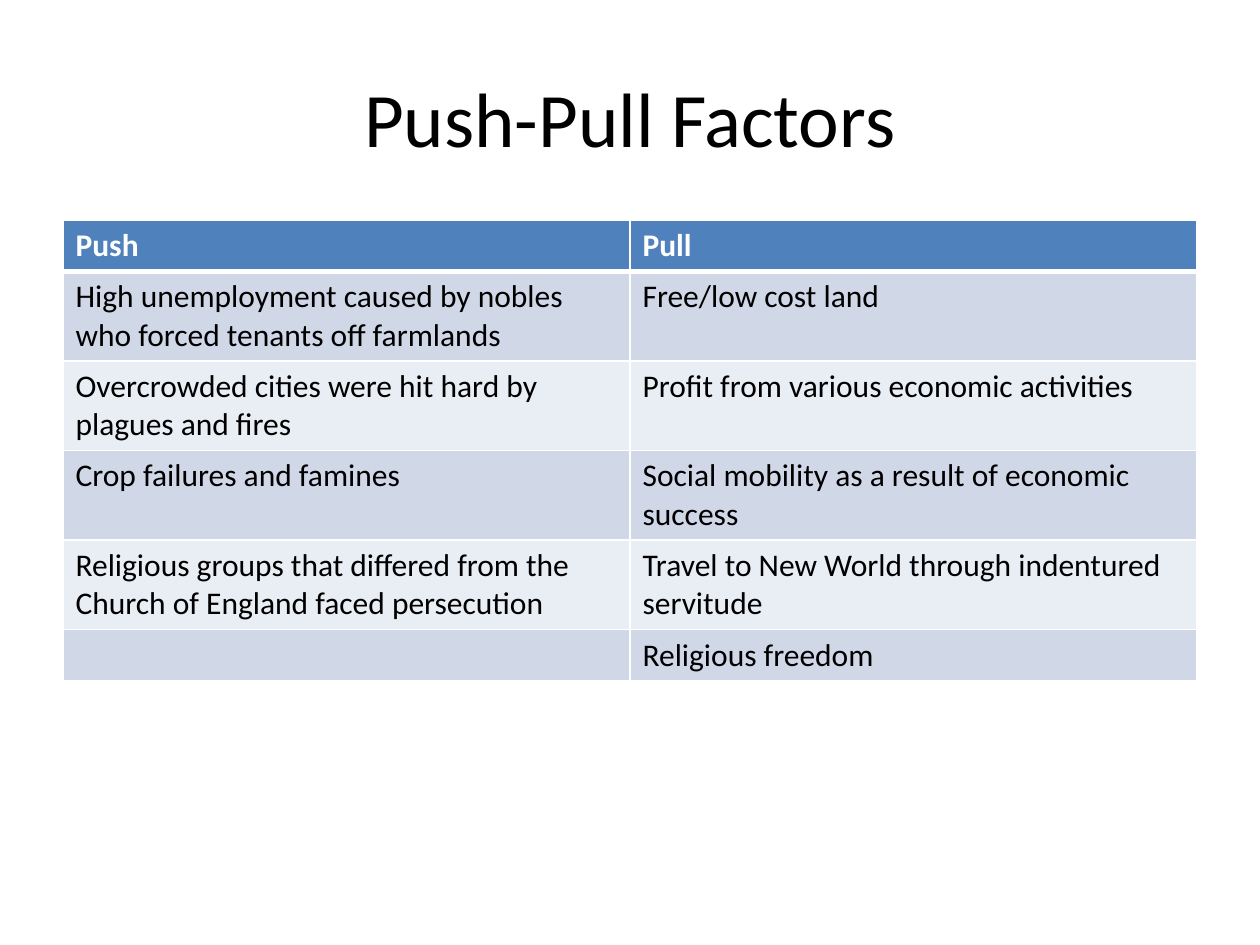
import pptx
import pptx.util
import pptx.dml.color
import pptx.enum.text
import pptx.oxml.ns
import lxml.etree

Pt = pptx.util.Pt

# Content
TITLE = "Push-Pull Factors"
FACTORS = [
    ("Push", "Pull"),
    ("High unemployment caused by nobles who forced tenants off farmlands",
     "Free/low cost land"),
    ("Overcrowded cities were hit hard by plagues and fires",
     "Profit from various economic activities"),
    ("Crop failures and famines",
     "Social mobility as a result of economic success"),
    ("Religious groups that differed from the Church of England faced persecution",
     "Travel to New World through indentured servitude"),
    ("", "Religious freedom"),
]

THEME = {
    "font": "Calibri", "title_size": 44, "body_size": 18,
    "text": "000000", "header_text": "FFFFFF", "header_fill": "4F81BD",
    "bands": ("D0D8E8", "E9EDF4"),
    "border": "FFFFFF", "border_width": 1, "header_rule": 3,
}

# Layout in points
SLIDE_W, SLIDE_H = 720, 540
MARGIN = 36
CONTENT_W = SLIDE_W - 2 * MARGIN
TITLE_TOP, TITLE_H = 21.6, 90
TABLE_TOP, ROW_H = 126, 29.2


def add_text(paragraph, text, size, color, bold=False):
    run = paragraph.add_run()
    run.text = text
    run.font.name = THEME["font"]
    run.font.size = Pt(size)
    run.font.bold = bold
    run.font.color.rgb = pptx.dml.color.RGBColor.from_string(color)


def add_borders(cell, widths):
    properties = cell._tc.get_or_add_tcPr()
    qn = pptx.oxml.ns.qn
    for side, width in widths.items():
        line = lxml.etree.SubElement(properties, qn("a:ln" + side), w=str(Pt(width)))
        fill = lxml.etree.SubElement(line, qn("a:solidFill"))
        lxml.etree.SubElement(fill, qn("a:srgbClr"), val=THEME["border"])


def add_title(slide):
    title = slide.shapes.title
    title.left, title.top = Pt(MARGIN), Pt(TITLE_TOP)
    title.width, title.height = Pt(CONTENT_W), Pt(TITLE_H)
    title.text_frame.vertical_anchor = pptx.enum.text.MSO_ANCHOR.MIDDLE
    heading = title.text_frame.paragraphs[0]
    heading.alignment = pptx.enum.text.PP_ALIGN.CENTER
    add_text(heading, TITLE, THEME["title_size"], THEME["text"])


def add_factors(slide):
    row_count, column_count = len(FACTORS), len(FACTORS[0])
    factors = slide.shapes.add_table(
        row_count, column_count, Pt(MARGIN), Pt(TABLE_TOP),
        Pt(CONTENT_W), Pt(ROW_H * row_count)).table
    for row, texts in enumerate(FACTORS):
        header = row == 0
        fill = THEME["header_fill"] if header else THEME["bands"][(row - 1) % 2]
        color = THEME["header_text"] if header else THEME["text"]
        widths = dict.fromkeys("LRTB", THEME["border_width"])
        # Heavier rule between the header and the first factor
        if row < 2:
            widths["B" if header else "T"] = THEME["header_rule"]
        for column, text in enumerate(texts):
            cell = factors.cell(row, column)
            add_borders(cell, widths)
            cell.fill.solid()
            cell.fill.fore_color.rgb = pptx.dml.color.RGBColor.from_string(fill)
            if text:
                add_text(cell.text_frame.paragraphs[0], text,
                         THEME["body_size"], color, header)


def main():
    deck = pptx.Presentation()
    deck.slide_width, deck.slide_height = Pt(SLIDE_W), Pt(SLIDE_H)
    slide = deck.slides.add_slide(deck.slide_layouts.get_by_name("Title Only"))
    add_title(slide)
    add_factors(slide)
    deck.save("out.pptx")


if __name__ == "__main__":
    main()
